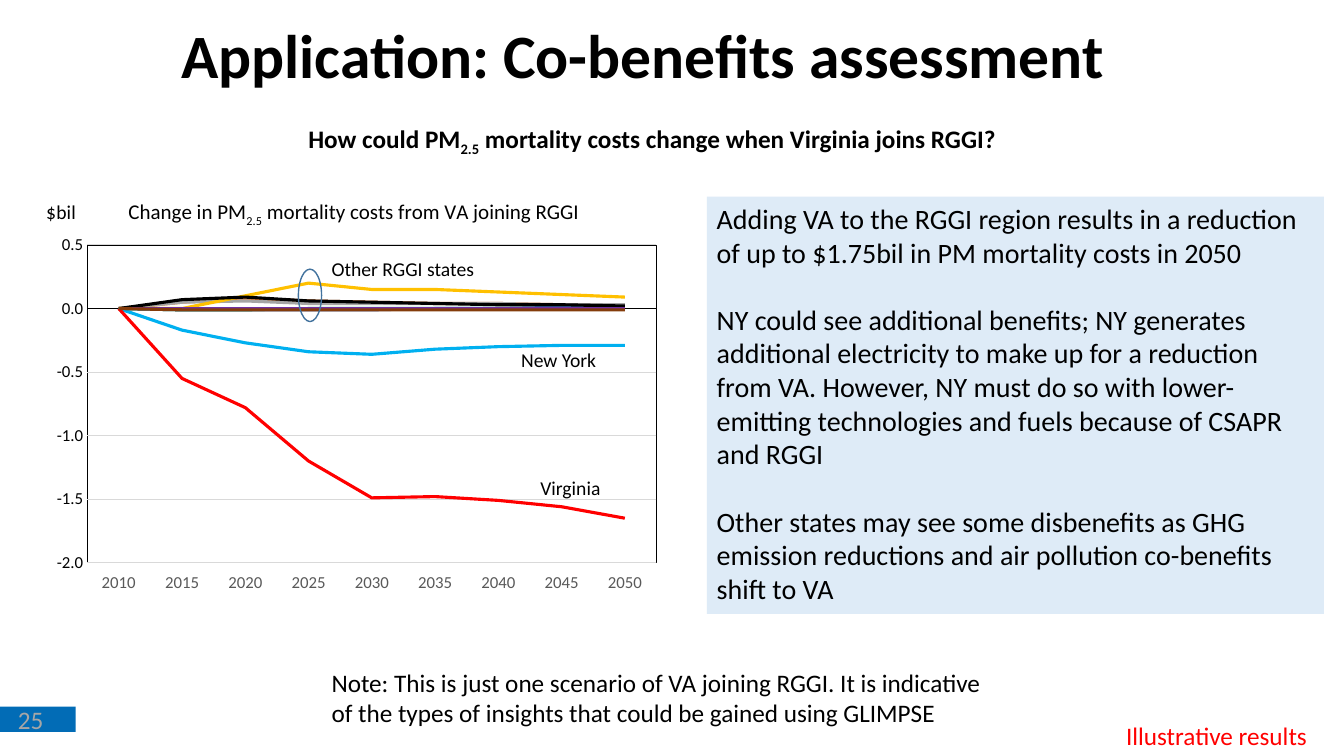
"""Build the co-benefits assessment slide with its line chart and commentary."""
from dataclasses import dataclass

from pptx import Presentation, oxml
from pptx import util as u
from pptx.chart import data
from pptx.dml import color
from pptx.enum import chart as ch
from pptx.enum import shapes, text
from pptx.oxml import ns

PX = 9144


@dataclass(frozen=True)
class Theme:
    font: str = "Calibri"
    ink: str = "000000"
    paper: str = "FFFFFF"
    bar: str = "026CB6"
    number: str = "A6A6A6"
    panel: str = "DEEBF7"
    alert: str = "FF0000"
    ring: str = "43739E"
    years: str = "595959"
    grid: str = "D9D9D9"
    heading: int = 44
    body: int = 20
    note: int = 18
    caption: int = 15
    label: int = 14
    tick: int = 12


@dataclass(frozen=True)
class Box:
    x: int
    y: int
    w: int
    h: int

    def emu(self) -> tuple:
        return tuple(u.Emu(n * PX) for n in (self.x, self.y, self.w, self.h))


@dataclass(frozen=True)
class Note:
    words: str
    box: Box
    size: int
    ink: str = "000000"
    bold: bool = False
    wrap: bool = False


@dataclass(frozen=True)
class Trend:
    ink: str
    values: tuple


T = Theme()
YEARS = [str(year) for year in range(2010, 2051, 5)]
TRENDS = (
    Trend("00B050", (0, -0.01, -0.01, 0, 0, 0, 0, 0, 0.01)),
    Trend("ED7D31", (0, 0.05, 0.08, 0.06, 0.05, 0.04, 0.04, 0.03, 0.02)),
    Trend("A5A5A5", (0, 0.05, 0.06, 0.04, 0.04, 0.04, 0.04, 0.03, 0.03)),
    Trend("FFC000", (0, 0, 0.1, 0.2, 0.15, 0.15, 0.13, 0.11, 0.09)),
    Trend("4472C4", (0, -0.01, -0.01, -0.01, -0.01, 0, 0, 0.01, 0.01)),
    Trend("000000", (0, 0.07, 0.09, 0.06, 0.05, 0.04, 0.03, 0.03, 0.02)),
    Trend("00B0F0", (0, -0.17, -0.27, -0.34, -0.36, -0.32, -0.3, -0.29, -0.29)),
    Trend("7030A0", (0,) * 9),
    Trend("FF0000", (0, -0.55, -0.78, -1.2, -1.49, -1.48, -1.51, -1.56, -1.65)),
    Trend("843C0B", (0,) + (-0.01,) * 8),
)
FINDINGS = (
    "Adding VA to the RGGI region results in a reduction of up to $1.75bil in PM mortality "
    "costs in 2050",
    "NY could see additional benefits; NY generates additional electricity to make up for a "
    "reduction from VA. However, NY must do so with lower-emitting technologies and fuels "
    "because of CSAPR and RGGI",
    "Other states may see some disbenefits as GHG emission reductions and air pollution "
    "co-benefits shift to VA",
)
NOTES = (
    Note("25", Box(8, 694, 75, 40), T.note, T.number, wrap=True),
    Note("Illustrative results", Box(1107, 710, 201, 40), T.note, T.alert),
    Note("How could PM_2.5_ mortality costs change when Virginia joins RGGI?",
         Box(296, 117, 741, 71), T.note, bold=True, wrap=True),
    Note("Virginia", Box(526, 467, 81, 34), T.label),
    Note("New York", Box(507, 340, 95, 34), T.label),
    Note("Other RGGI states", Box(319, 250, 163, 34), T.label),
    Note("Note: This is just one scenario of VA joining RGGI. It is indicative of the types "
         "of insights that could be gained using GLIMPSE",
         Box(319, 657, 667, 71), T.note, wrap=True),
)


def rgb(ink: str) -> color.RGBColor:
    return color.RGBColor.from_string(ink)


def style(font, size: int, ink: str = T.ink, bold: bool = False) -> None:
    font.name, font.size, font.bold = T.font, u.Pt(size), bold
    font.color.rgb = rgb(ink)


def write(tf, *paragraphs: str, size: int, ink: str = T.ink, bold: bool = False,
          gap: int = 0) -> None:
    """Fill a text frame; parts between underscores become subscripts."""
    for i, words in enumerate(paragraphs):
        p = tf.add_paragraph() if i else tf.paragraphs[0]
        p.alignment = text.PP_ALIGN.LEFT
        if i and gap:
            p.space_before = u.Pt(gap)
        for k, part in enumerate(words.split("_")):
            r = p.add_run()
            r.text = part
            style(r.font, size, ink, bold)
            if k % 2:
                r.font._element.set("baseline", "-25000")


def add_note(s, note: Note) -> None:
    tf = s.shapes.add_textbox(*note.box.emu()).text_frame
    tf.word_wrap = note.wrap
    tf.auto_size = text.MSO_AUTO_SIZE.SHAPE_TO_FIT_TEXT
    write(tf, note.words, size=note.size, ink=note.ink, bold=note.bold)


def add_block(s, kind, box: Box, fill: str = "", line: str = ""):
    sp = s.shapes.add_shape(kind, *box.emu())
    sp.shadow.inherit = False
    if fill:
        sp.fill.solid()
        sp.fill.fore_color.rgb = rgb(fill)
    else:
        sp.fill.background()
    if line:
        sp.line.color.rgb, sp.line.width = rgb(line), u.Pt(1)
    else:
        sp.line.fill.background()
    return sp


def place(parent, index: int, **where: float) -> None:
    """Give a chart part a manual layout as fractions of the chart."""
    for old in parent.findall(ns.qn("c:layout")):
        parent.remove(old)
    target = '<c:layoutTarget val="inner"/>' if "w" in where else ""
    modes = "".join(f'<c:{k}Mode val="edge"/>' for k in "xy")
    sizes = "".join(f'<c:{k} val="{v}"/>' for k, v in where.items())
    parent.insert(index, oxml.parse_xml(
        f'<c:layout {ns.nsdecls("c")}><c:manualLayout>{target}{modes}{sizes}'
        '</c:manualLayout></c:layout>'))


def frame_xml(fill: str, line: str):
    """Return chart shape properties with an optional fill and outline."""
    def paint(ink: str) -> str:
        return f'<a:solidFill><a:srgbClr val="{ink}"/></a:solidFill>' if ink else "<a:noFill/>"
    return oxml.parse_xml(f'<c:spPr {ns.nsdecls("c", "a")}>{paint(fill)}'
                          f'<a:ln w="9525">{paint(line)}</a:ln></c:spPr>')


def add_costs_chart(s, box: Box) -> None:
    cd = data.CategoryChartData(number_format="0.00")
    cd.categories = YEARS
    for i, trend in enumerate(TRENDS, 1):
        cd.add_series(f"Series {i}", trend.values)
    chart = s.shapes.add_chart(ch.XL_CHART_TYPE.LINE, *box.emu(), cd).chart
    style(chart.font, 10)
    chart.has_legend = False
    for series, trend in zip(chart.plots[0].series, TRENDS):
        series.smooth = False
        series.marker.style = ch.XL_MARKER_STYLE.NONE
        series.format.line.color.rgb = rgb(trend.ink)
        series.format.line.width = u.Pt(2.25)

    years, costs = chart.category_axis, chart.value_axis
    for axis, ink in ((years, T.years), (costs, T.ink)):
        axis.major_tick_mark = axis.minor_tick_mark = ch.XL_TICK_MARK.NONE
        style(axis.tick_labels.font, T.tick, ink)
    years.tick_label_position = ch.XL_TICK_LABEL_POSITION.LOW
    costs.minimum_scale, costs.maximum_scale, costs.major_unit = -2, 0.5, 0.5
    costs.tick_labels.number_format = "0.0"
    costs.tick_labels.number_format_is_linked = False
    costs.format.line.fill.background()
    for line, ink in ((years.format.line, T.ink), (costs.major_gridlines.format.line, T.grid)):
        line.color.rgb, line.width = rgb(ink), u.Pt(0.75)

    write(chart.chart_title.text_frame,
          "Change in PM_2.5_ mortality costs from VA joining RGGI", size=T.caption)
    write(years.axis_title.text_frame, "$bil", size=T.label)
    place(chart.chart_title._element, 1, x=0.14, y=0.04)
    place(years.axis_title._element, 1, x=0.01, y=0.04)
    space = chart._chartSpace
    area = space.chart.plotArea
    place(area, 0, x=0.08, y=0.155, w=0.895, h=0.728)
    area.append(frame_xml("", T.ink))
    space.chart.addnext(frame_xml(T.paper, ""))


def main() -> None:
    prs = Presentation()
    prs.slide_width, prs.slide_height = u.Emu(1333 * PX), u.Emu(750 * PX)
    s = prs.slides.add_slide(prs.slide_layouts[5])
    title = s.shapes.title
    title.left, title.top, title.width, title.height = Box(170, 0, 1064, 117).emu()
    tf = title.text_frame
    tf.auto_size = text.MSO_AUTO_SIZE.NONE
    tf.vertical_anchor = text.MSO_ANCHOR.MIDDLE
    write(tf, "Application: Co-benefits assessment", size=T.heading, bold=True)
    tf.paragraphs[0].line_spacing = 0.9

    add_block(s, shapes.MSO_SHAPE.RECTANGLE, Box(0, 701, 75, 25), fill=T.bar)
    panel = add_block(s, shapes.MSO_SHAPE.RECTANGLE, Box(701, 195, 612, 414), fill=T.panel)
    panel.text_frame.word_wrap = True
    panel.text_frame.vertical_anchor = text.MSO_ANCHOR.TOP
    write(panel.text_frame, *FINDINGS, size=T.body, gap=24)
    add_costs_chart(s, Box(36, 176, 631, 433))
    for note in NOTES:
        add_note(s, note)
    add_block(s, shapes.MSO_SHAPE.OVAL, Box(296, 267, 23, 52), line=T.ring)
    prs.save("out.pptx")


if __name__ == "__main__":
    main()
